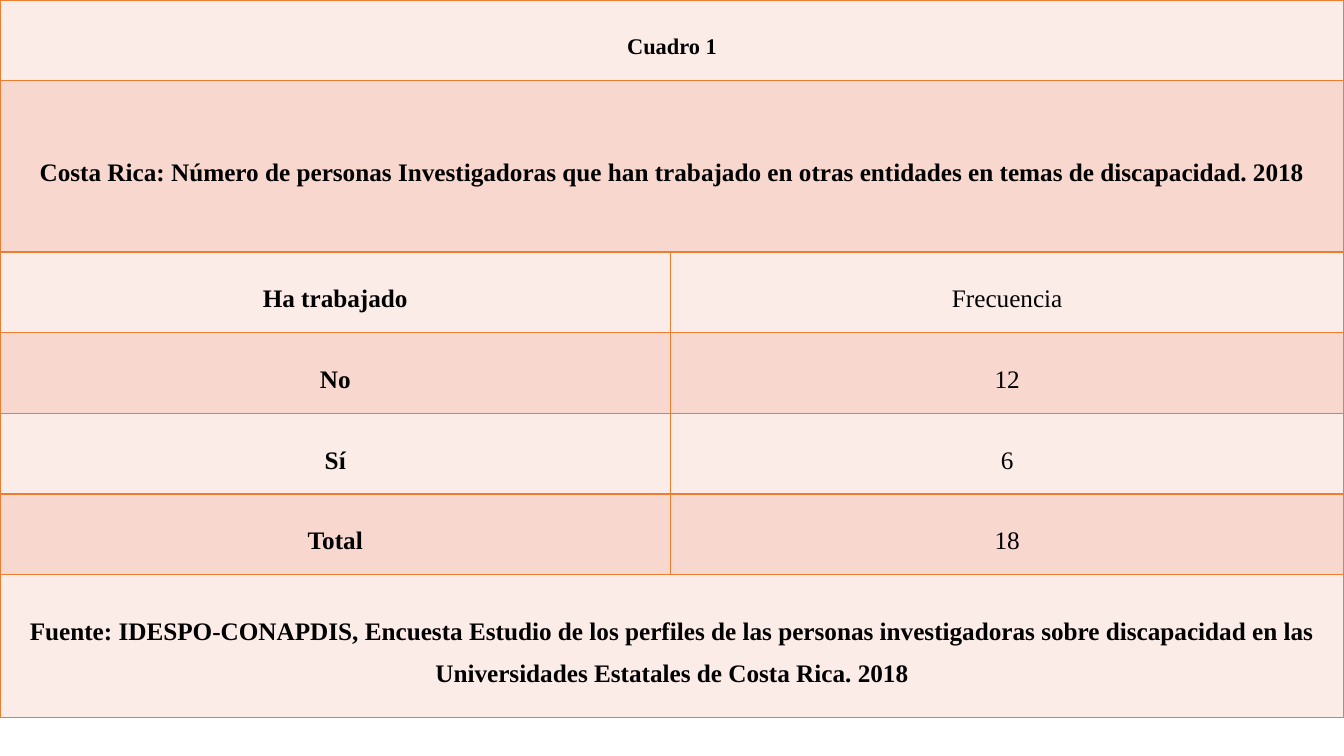
from dataclasses import dataclass

from lxml.etree import SubElement
from pptx import Presentation
from pptx.dml.color import RGBColor
from pptx.enum.text import MSO_ANCHOR, PP_ALIGN
from pptx.oxml.ns import qn
from pptx.table import Table, _Cell
from pptx.util import Inches, Pt

PALE = RGBColor(0xFC, 0xEC, 0xE8)
PEACH = RGBColor(0xF8, 0xD7, 0xCE)
ORANGE = RGBColor(0xED, 0x7D, 0x31)
BLACK = RGBColor(0, 0, 0)

WIDTHS = (6.65, 6.68)
CELL = {
    "vertical_anchor": MSO_ANCHOR.MIDDLE,
    "margin_left": Inches(0.05),
    "margin_right": Inches(0.05),
    "margin_top": 0,
    "margin_bottom": 0,
}
PARA = {"alignment": PP_ALIGN.CENTER, "line_spacing": 1.5, "space_after": Pt(10)}


@dataclass
class Row:
    label: str
    value: str = ""  # a row without a value spans both columns
    height: float = 0.8
    size: int = 18


ROWS = [
    Row("Cuadro 1", size=16),
    Row("Costa Rica: Número de personas Investigadoras que han trabajado "
        "en otras entidades en temas de discapacidad. 2018", height=1.7),
    Row("Ha trabajado", "Frecuencia"),
    Row("No", "12"),
    Row("Sí", "6"),
    Row("Total", "18"),
    Row("Fuente: IDESPO-CONAPDIS, Encuesta Estudio de los perfiles de las "
        "personas investigadoras sobre discapacidad en las Universidades "
        "Estatales de Costa Rica. 2018", height=1.42),
]


def apply(target: object, values: dict) -> None:
    for name, value in values.items():
        setattr(target, name, value)


def style(cell: _Cell, fill: RGBColor) -> None:
    apply(cell, CELL)
    # Borders come before the fill in the cell properties
    props = cell._tc.get_or_add_tcPr()
    for side in ("a:lnL", "a:lnR", "a:lnT", "a:lnB"):
        line = SubElement(props, qn(side), w=str(Pt(1)))
        solid = SubElement(line, qn("a:solidFill"))
        SubElement(solid, qn("a:srgbClr"), val=str(ORANGE))
    cell.fill.solid()
    cell.fill.fore_color.rgb = fill


def write(cell: _Cell, text: str, size: int, bold: bool) -> None:
    para = cell.text_frame.paragraphs[0]
    apply(para, PARA)
    run = para.add_run()
    run.text = text
    apply(run.font, {"name": "Times New Roman", "size": Pt(size), "bold": bold})
    run.font.color.rgb = BLACK


def draw(table: Table, index: int, row: Row) -> None:
    table.rows[index].height = Inches(row.height)
    left, right = table.cell(index, 0), table.cell(index, 1)
    for cell in (left, right):
        style(cell, PEACH if index % 2 else PALE)
    write(left, row.label, row.size, True)
    if row.value:
        write(right, row.value, row.size, False)
    else:
        left.merge(right)


def main() -> None:
    deck = Presentation()
    apply(deck, {"slide_width": Inches(13.33), "slide_height": Inches(7.5)})
    slide = deck.slides.add_slide(deck.slide_layouts[6])

    # Full-width table
    height = sum(row.height for row in ROWS)
    table = slide.shapes.add_table(
        len(ROWS), len(WIDTHS), 0, 0, Inches(sum(WIDTHS)), Inches(height)
    ).table
    apply(table, {"first_row": False, "horz_banding": False})
    for column, width in zip(table.columns, WIDTHS):
        column.width = Inches(width)
    for index, row in enumerate(ROWS):
        draw(table, index, row)

    deck.save("out.pptx")


if __name__ == "__main__":
    main()
